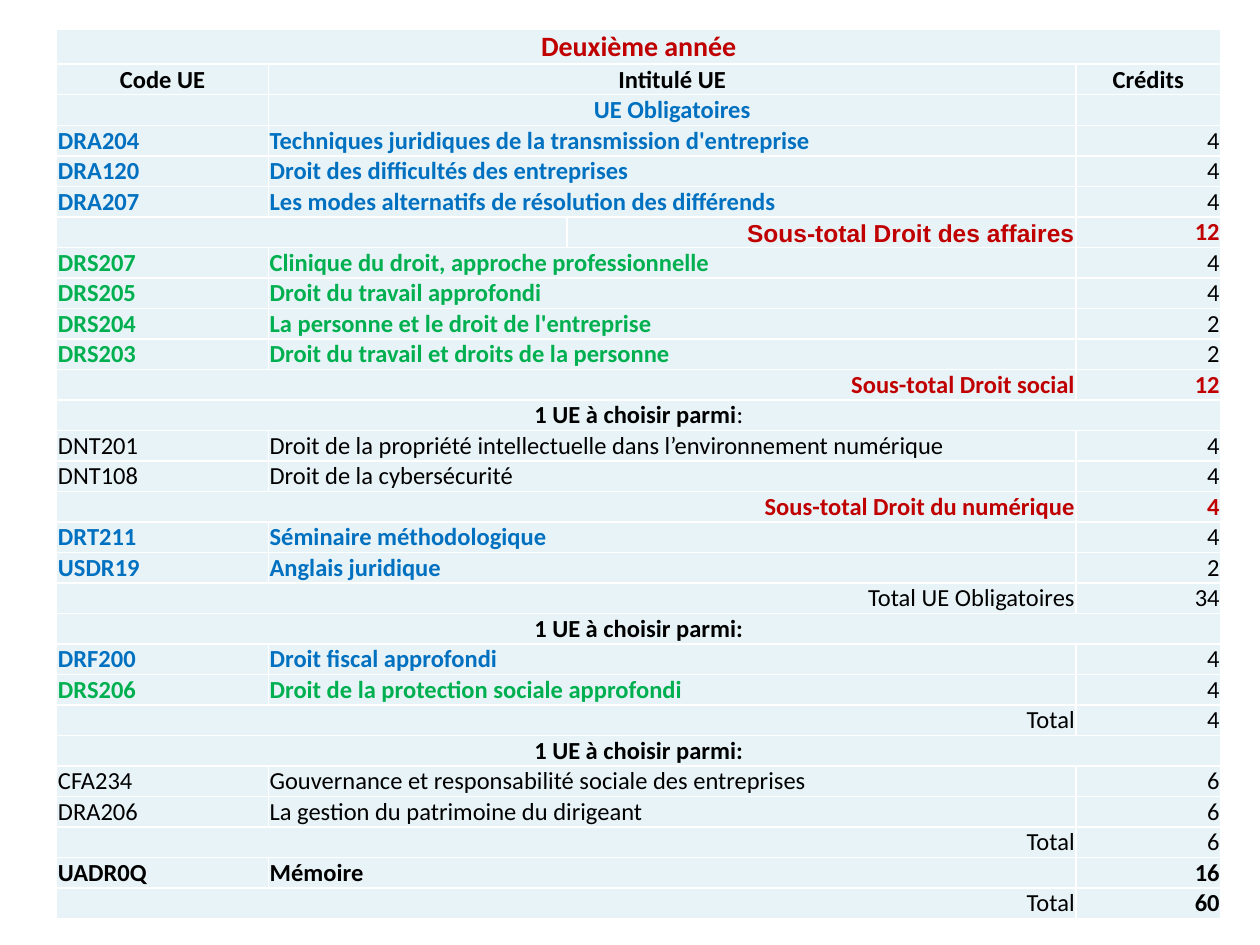
from lxml import etree
from pptx import Presentation
from pptx.dml.color import RGBColor
from pptx.enum.text import MSO_ANCHOR, PP_ALIGN
from pptx.oxml import parse_xml
from pptx.oxml.ns import nsdecls, qn
from pptx.util import Inches, Pt

LEFT, CENTER, RIGHT = PP_ALIGN.LEFT, PP_ALIGN.CENTER, PP_ALIGN.RIGHT
BLACK, RED, BLUE, GREEN = "000000", "C00000", "0070C0", "00B050"
PALE, WHITE = "E8F3F7", "FFFFFF"


def color(value):
    return RGBColor.from_string(value)


def format_run(run, value, bold, size=14, name="Calibri"):
    run.font.name = name
    run.font.size = Pt(size)
    run.font.bold = bold
    run.font.color.rgb = color(value)


layouts = {
    "banner": [(0, 3, CENTER)],
    "header": [(0, 0, CENTER), (1, 2, CENTER), (3, 3, CENTER)],
    "course": [(0, 0, LEFT), (1, 2, LEFT), (3, 3, RIGHT)],
    "total": [(0, 2, RIGHT), (3, 3, RIGHT)],
    "split": [(0, 1, LEFT), (2, 2, RIGHT), (3, 3, RIGHT)],
}
plain, strong = (BLACK, False), (BLACK, True)
red, blue, green = (RED, True), (BLUE, True), (GREEN, True)

rows = [
    ("banner", ["Deuxième année"], red, red),
    ("header", ["Code UE", "Intitulé UE", "Crédits"], strong, strong),
    ("header", ["", "UE Obligatoires", ""], blue, blue),
    ("course", ["DRA204", "Techniques juridiques de la transmission d'entreprise", "4"], blue, plain),
    ("course", ["DRA120", "Droit des difficultés des entreprises", "4"], blue, plain),
    ("course", ["DRA207", "Les modes alternatifs de résolution des différends", "4"], blue, plain),
    ("split", ["", "Sous-total Droit des affaires", "12"], red, red),
    ("course", ["DRS207", "Clinique du droit, approche professionnelle", "4"], green, plain),
    ("course", ["DRS205", "Droit du travail approfondi", "4"], green, plain),
    ("course", ["DRS204", "La personne et le droit de l'entreprise", "2"], green, plain),
    ("course", ["DRS203", "Droit du travail et droits de la personne", "2"], green, plain),
    ("total", ["Sous-total Droit social", "12"], red, red),
    ("banner", ["1 UE à choisir parmi"], strong, strong),
    ("course", ["DNT201", "Droit de la propriété intellectuelle dans l’environnement numérique", "4"], plain, plain),
    ("course", ["DNT108", "Droit de la cybersécurité", "4"], plain, plain),
    ("total", ["Sous-total Droit du numérique", "4"], red, red),
    ("course", ["DRT211", "Séminaire méthodologique", "4"], blue, plain),
    ("course", ["USDR19", "Anglais juridique", "2"], blue, plain),
    ("total", ["Total UE Obligatoires", "34"], plain, plain),
    ("banner", ["1 UE à choisir parmi:"], strong, strong),
    ("course", ["DRF200", "Droit fiscal approfondi", "4"], blue, plain),
    ("course", ["DRS206", "Droit de la protection sociale approfondi", "4"], green, plain),
    ("total", ["Total", "4"], plain, plain),
    ("banner", ["1 UE à choisir parmi:"], strong, strong),
    ("course", ["CFA234", "Gouvernance et responsabilité sociale des entreprises", "6"], plain, plain),
    ("course", ["DRA206", "La gestion du patrimoine du dirigeant", "6"], plain, plain),
    ("total", ["Total", "6"], plain, plain),
    ("course", ["UADR0Q", "Mémoire", "16"], strong, strong),
    ("total", ["Total", "60"], plain, strong),
]

presentation = Presentation()
presentation.slide_width = Inches(10)
presentation.slide_height = Inches(7.5)
slide = presentation.slides.add_slide(presentation.slide_layouts[6])

table_height, title_height = Inches(7.06), Inches(0.28)
table = slide.shapes.add_table(
    len(rows), 4, Inches(0.45), Inches(0.23), Inches(9.24), table_height
).table
table.first_row = False
table.horz_banding = False
for column, width in zip(table.columns, [1.68, 2.37, 4.04, 1.15]):
    column.width = Inches(width)
for row in table.rows:
    row.height = (table_height - title_height) // (len(rows) - 1)
table.rows[0].height = title_height

for cell in table.iter_cells():
    cell.fill.solid()
    cell.fill.fore_color.rgb = color(PALE)
    cell.margin_left = cell.margin_right = Inches(0.01)
    cell.margin_top = cell.margin_bottom = 0
    cell.vertical_anchor = MSO_ANCHOR.BOTTOM
    properties = cell._tc.get_or_add_tcPr()
    for position, side in enumerate(["lnL", "lnR", "lnT", "lnB"]):
        properties.insert(position, parse_xml(
            f'<a:{side} {nsdecls("a")} w="{Pt(1)}"><a:solidFill>'
            f'<a:srgbClr val="{WHITE}"/></a:solidFill></a:{side}>'
        ))
    paragraph = cell.text_frame.paragraphs[0]
    etree.SubElement(paragraph._p, qn("a:endParaRPr"), sz="1400")

for index, (kind, texts, style, credit_style) in enumerate(rows):
    for (first, last, alignment), text in zip(layouts[kind], texts):
        cell = table.cell(index, first)
        if last > first:
            cell.merge(table.cell(index, last))
        if text:
            paragraph = cell.text_frame.paragraphs[0]
            paragraph.text = text
            paragraph.alignment = alignment
            format_run(paragraph.runs[0], *(credit_style if first == 3 else style))

title = table.cell(0, 0)
title.vertical_anchor = MSO_ANCHOR.MIDDLE
title.text_frame.paragraphs[0].runs[0].font.size = Pt(16)
table.cell(6, 2).text_frame.paragraphs[0].runs[0].font.name = "Arial"
colon = table.cell(12, 0).text_frame.paragraphs[0].add_run()
colon.text = ":"
format_run(colon, *plain)

presentation.save("out.pptx")
